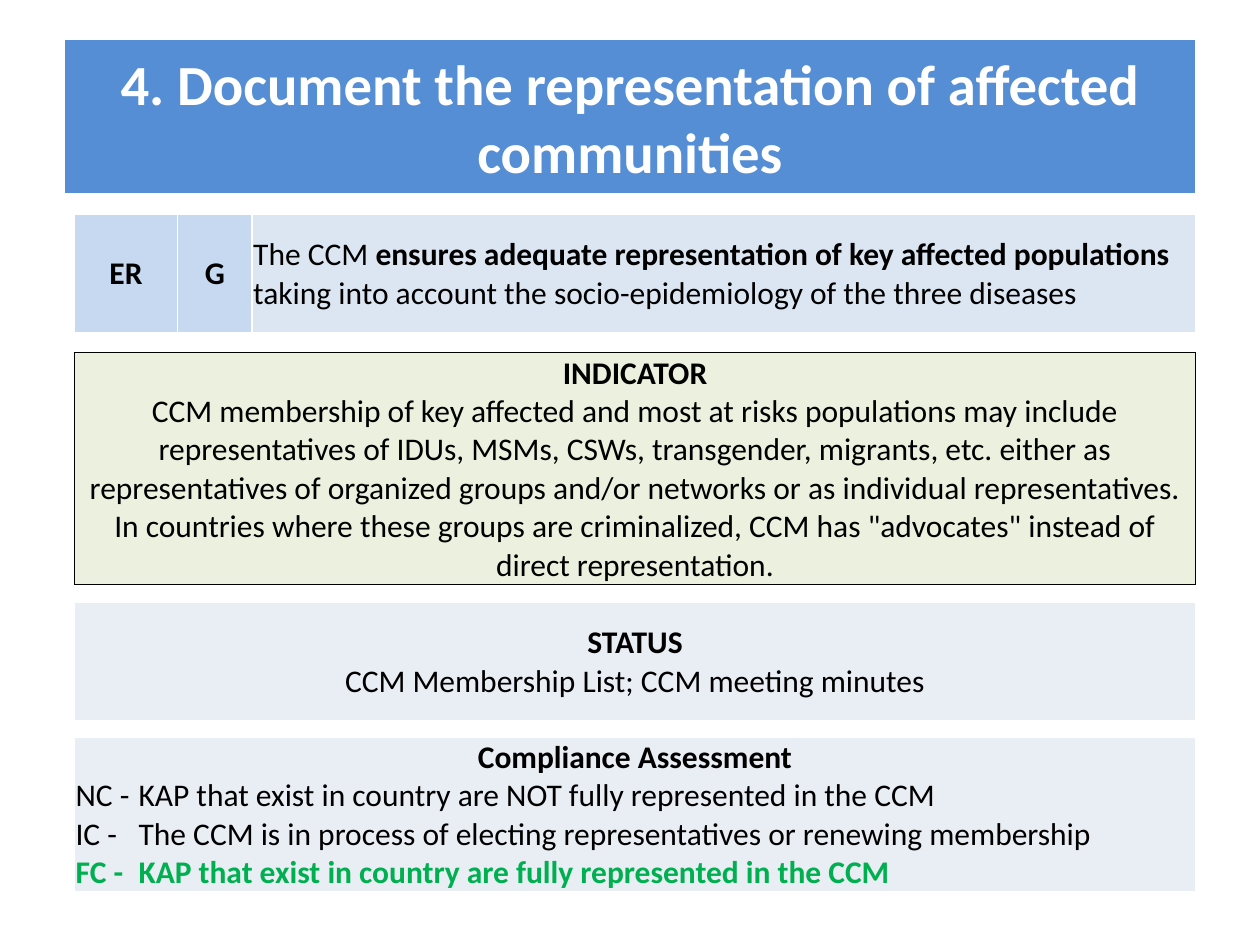
import pptx
import pptx.util
import pptx.dml.color
import pptx.enum.shapes
import pptx.enum.text
import pptx.oxml.ns
from lxml import etree
from pptx.util import Inches

COLORS = {
    "white": "FFFFFF",
    "black": "000000",
    "title": "558ED5",
    "label": "C6D9F1",
    "requirement": "DCE6F2",
    "indicator": "EBF1DE",
    "panel": "E9EDF4",
    "full": "00B050",
}
FONT = "Calibri"
CENTER = pptx.enum.text.PP_ALIGN.CENTER
LEFT = pptx.enum.text.PP_ALIGN.LEFT
MIDDLE = pptx.enum.text.MSO_ANCHOR.MIDDLE
TABLE_LEFT = 0.59
TABLE_WIDTH = 8.9


def rgb(name):
    return pptx.dml.color.RGBColor.from_string(COLORS[name])


def add_run(paragraph, text, bold=False, color="black", size=18):
    run = paragraph.add_run()
    run.text = text
    run.font.name = FONT
    run.font.size = pptx.util.Pt(size)
    run.font.bold = bold
    run.font.color.rgb = rgb(color)


def add_tab_stop(paragraph, position):
    properties = paragraph._p.get_or_add_pPr()
    stops = etree.SubElement(properties, pptx.oxml.ns.qn("a:tabLst"))
    etree.SubElement(stops, pptx.oxml.ns.qn("a:tab"),
                     pos=str(Inches(position)), algn="l")


def set_borders(cell, color, width):
    """Draw all four borders; they come before the fill in the cell XML."""
    properties = cell._tc.get_or_add_tcPr()
    for index, side in enumerate(("lnL", "lnR", "lnT", "lnB")):
        line = etree.Element(pptx.oxml.ns.qn("a:" + side),
                             w=str(pptx.util.Pt(width)))
        fill = etree.SubElement(line, pptx.oxml.ns.qn("a:solidFill"))
        etree.SubElement(fill, pptx.oxml.ns.qn("a:srgbClr"), val=COLORS[color])
        properties.insert(index, line)


def fill_cell(cell, fill, paragraphs, border):
    """Each paragraph is (alignment, runs); each run is (text, bold, color)."""
    cell.fill.solid()
    cell.fill.fore_color.rgb = rgb(fill)
    cell.vertical_anchor = MIDDLE
    cell.margin_left = cell.margin_right = cell.margin_top = Inches(0.01)
    cell.margin_bottom = 0
    set_borders(cell, *border)
    for index, (alignment, runs) in enumerate(paragraphs):
        frame = cell.text_frame
        paragraph = frame.add_paragraph() if index else frame.paragraphs[0]
        paragraph.alignment = alignment
        if any("\t" in run[0] for run in runs):
            add_tab_stop(paragraph, 0.5)
        for run in runs:
            add_run(paragraph, *run)


def add_row_table(slide, top, height, cells, widths=(TABLE_WIDTH,),
                  border=("white", 1)):
    """Add a one-row table; each cell is (fill, paragraphs)."""
    frame = slide.shapes.add_table(1, len(cells), Inches(TABLE_LEFT), Inches(top),
                                   Inches(TABLE_WIDTH), Inches(height))
    table = frame.table
    table.first_row = table.horz_banding = False
    table.rows[0].height = Inches(height)
    for column, width in enumerate(widths):
        table.columns[column].width = Inches(width)
        fill_cell(table.cell(0, column), *cells[column], border)


def add_title(slide, text):
    shape = slide.shapes.add_shape(pptx.enum.shapes.MSO_SHAPE.RECTANGLE,
                                   Inches(0.5), Inches(0.3), Inches(9), Inches(1.25))
    shape.shadow.inherit = False
    shape.fill.solid()
    shape.fill.fore_color.rgb = rgb("title")
    shape.line.color.rgb = rgb("white")
    shape.line.width = pptx.util.Pt(2)
    frame = shape.text_frame
    frame.word_wrap = True
    frame.vertical_anchor = MIDDLE
    paragraph = frame.paragraphs[0]
    paragraph.alignment = CENTER
    add_run(paragraph, text, True, "white", 32.4)


def heading(text):
    return CENTER, [(text, True)]


def main():
    presentation = pptx.Presentation()
    presentation.slide_width = Inches(10)
    presentation.slide_height = Inches(7.5)
    slide = presentation.slides.add_slide(presentation.slide_layouts[6])

    add_title(slide, "4. Document the representation of affected communities")

    # Requirement
    add_row_table(slide, 1.7, 0.94, [
        ("label", [heading("ER")]),
        ("label", [heading("G")]),
        ("requirement", [(LEFT, [
            ("The CCM ",),
            ("ensures adequate representation of key affected populations", True),
            (" taking into account the socio-epidemiology of the three diseases",),
        ])]),
    ], widths=(0.82, 0.59, 7.49))

    # Indicator
    add_row_table(slide, 2.8, 1.84, [("indicator", [
        heading("INDICATOR"),
        (CENTER, [(
            "CCM membership of key affected and most at risks populations may "
            "include representatives of IDUs, MSMs, CSWs, transgender, migrants, "
            "etc. either as representatives of organized groups and/or networks "
            "or as individual representatives. In countries where these groups "
            "are criminalized, CCM has \"advocates\" instead of direct "
            "representation.",)]),
    ])], border=("black", 0.5))

    # Status
    add_row_table(slide, 4.78, 0.94, [("panel", [
        heading("STATUS"),
        (CENTER, [("CCM Membership List; CCM meeting minutes",)]),
    ])])

    # Compliance levels
    add_row_table(slide, 5.85, 1.21, [("panel", [
        heading("Compliance Assessment"),
        (LEFT, [("NC -\tKAP that exist in country are NOT fully represented "
                 "in the CCM",)]),
        (LEFT, [("IC -\tThe CCM is in process of electing representatives or "
                 "renewing membership",)]),
        (LEFT, [("FC -\tKAP that exist in country are fully represented "
                 "in the CCM", True, "full")]),
    ])])

    presentation.save("out.pptx")


if __name__ == "__main__":
    main()
